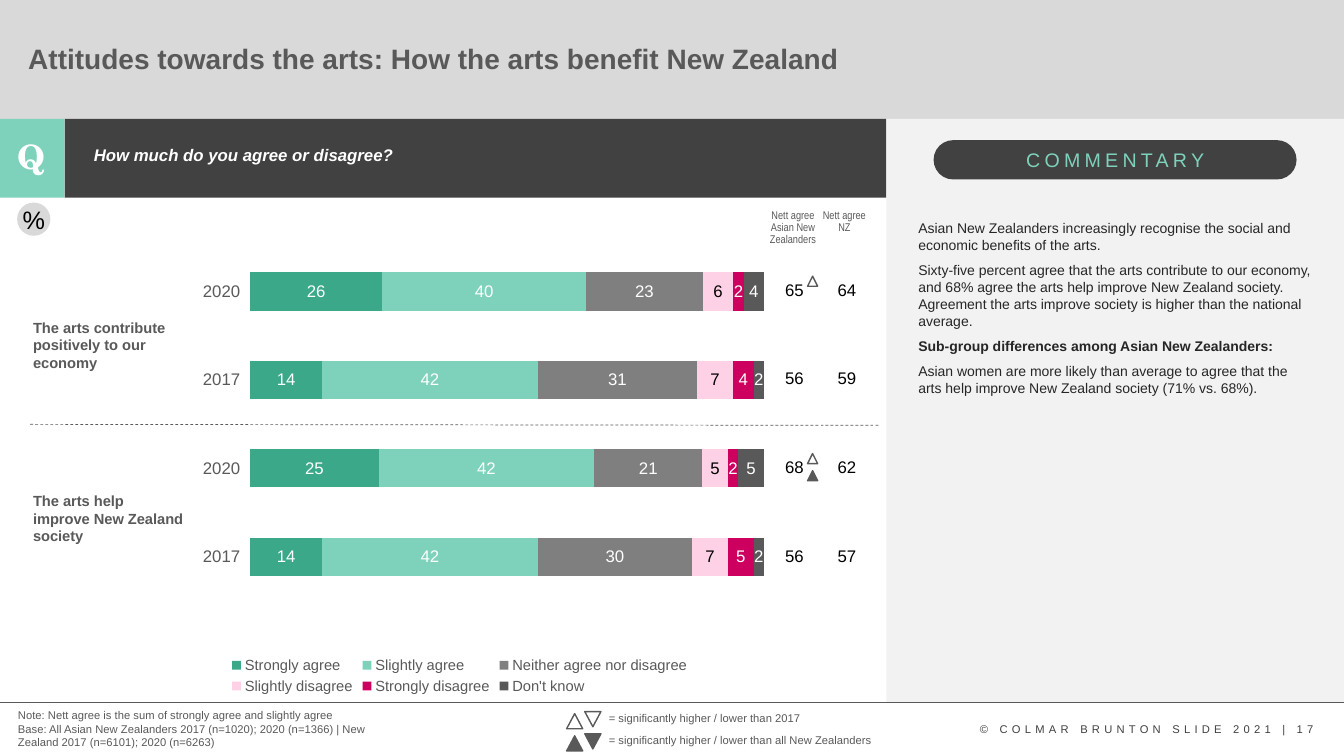
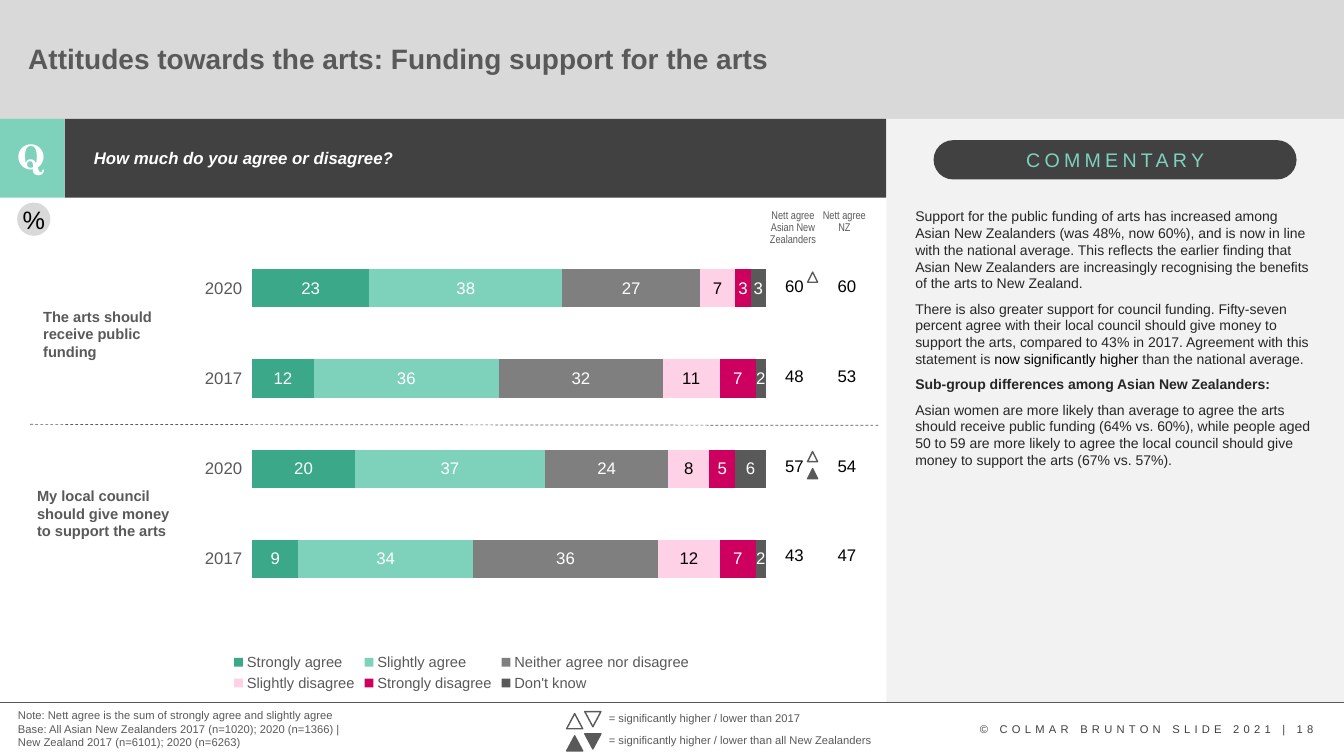
import pptx
import pptx.chart.data
import pptx.dml.color
import pptx.enum.chart
import pptx.enum.dml
import pptx.enum.shapes
import pptx.enum.text
import pptx.oxml
import pptx.oxml.ns
import pptx.util

Inches, Pt = pptx.util.Inches, pptx.util.Pt
qn = pptx.oxml.ns.qn
SHAPE = pptx.enum.shapes.MSO_SHAPE
ANCHOR = pptx.enum.text.MSO_ANCHOR
LEFT, CENTER = pptx.enum.text.PP_ALIGN.LEFT, pptx.enum.text.PP_ALIGN.CENTER

GREY, DARK, MINT = "595959", "414141", "7ED2BB"
PALE, PANEL, WHITE, BLACK, INK = "D9D9D9", "F2F2F2", "FFFFFF", "000000", "262626"
FONT = "Arial"
SERIES = [  # name, fill, label colour
    ("Strongly agree", "3AA889", WHITE),
    ("Slightly agree", MINT, WHITE),
    ("Neither agree nor disagree", "7F7F7F", WHITE),
    ("Slightly disagree", "FFD1E6", BLACK),
    ("Strongly disagree", "CD005F", WHITE),
    ("Don't know", GREY, WHITE),
]
YEARS = ["2017", "2020", "2017", "2020"]
NOTES = ["Note: Nett agree is the sum of strongly agree and slightly agree",
         "Base: All Asian New Zealanders 2017 (n=1020); 2020 (n=1366) | "
         "New Zealand 2017 (n=6101); 2020 (n=6263)"]
SUBGROUPS = [("Sub-group differences among Asian New Zealanders:", {"bold": True})]


def rgb(value):
    return pptx.dml.color.RGBColor.from_string(value)


def inches(*lengths):
    return [Inches(v) for v in lengths]


def style(font, size=10, color=GREY, name=FONT, bold=False, italic=False):
    font.size, font.name = Pt(size), name
    font.bold, font.italic = bold, italic
    font.color.rgb = rgb(color)


def write(tf, paragraphs, align=LEFT, line=None, before=0, spacing=0, plain=False, **fmt):
    """Fill a text frame; a paragraph is a string or a list of (text, overrides)."""
    if isinstance(paragraphs, str):
        paragraphs = [paragraphs]
    for i, runs in enumerate(paragraphs):
        p = tf.add_paragraph() if i else tf.paragraphs[0]
        if plain:
            pPr = p._p.get_or_add_pPr()
            pPr.set("marL", "0")
            pPr.set("indent", "0")
            pPr.append(pptx.oxml.parse_xml(
                f"<a:buNone {pptx.oxml.ns.nsdecls('a')}/>"))
        p.alignment = align
        p.space_before = Pt(before if i else 0)
        if line:
            p.line_spacing = line
        for text, extra in ([(runs, {})] if isinstance(runs, str) else runs):
            r = p.add_run()
            r.text = text
            style(r.font, **{**fmt, **extra})
            if spacing:
                r._r.get_or_add_rPr().set("spc", str(spacing * 100))


def add_text(shapes, x, y, w, h, paragraphs, wrap=True, **fmt):
    tf = shapes.add_textbox(*inches(x, y, w, h)).text_frame
    tf.word_wrap = wrap
    write(tf, paragraphs, **fmt)


def add_shape(shapes, kind, x, y, w, h, fill, line=None):
    sp = shapes.add_shape(kind, *inches(x, y, w, h))
    sp.shadow.inherit = False
    sp.fill.solid()
    sp.fill.fore_color.rgb = rgb(fill)
    if line:
        sp.line.color.rgb = rgb(line)
        sp.line.width = Pt(1)
    else:
        sp.line.fill.background()
    return sp


def add_line(shapes, x1, y1, x2, y2, dash=None):
    c = shapes.add_connector(pptx.enum.shapes.MSO_CONNECTOR.STRAIGHT,
                             *inches(x1, y1, x2, y2))
    c.line.color.rgb = rgb(GREY)
    c.line.width = Pt(0.5)
    if dash:
        c.line.dash_style = dash
    c.element.spPr.append(pptx.oxml.parse_xml(
        f"<a:effectLst {pptx.oxml.ns.nsdecls('a')}/>"))


def add_marker(shapes, x, y, w, h, fill, down=False):
    sp = add_shape(shapes, SHAPE.ISOSCELES_TRIANGLE, x, y, w, h, fill, GREY)
    sp.rotation = 180 if down else 0


def fill_placeholder(ph, x, y, w, h, text, anchor, **fmt):
    """Place a placeholder in front of the bands and fill it."""
    ph.element.getparent().append(ph.element)
    ph.left, ph.top, ph.width, ph.height = inches(x, y, w, h)
    tf = ph.text_frame
    tf.auto_size = pptx.enum.text.MSO_AUTO_SIZE.NONE
    tf.vertical_anchor = anchor
    write(tf, text, line=0.9, plain=True, **fmt)


def header(slide, x, y, w, h, title):
    add_shape(slide.shapes, SHAPE.RECTANGLE, x, y, w, h, PALE)
    fill_placeholder(slide.shapes.title, x + 0.18, y + 0.23, 11.19, 0.78, title,
                     ANCHOR.MIDDLE, size=20, bold=True)


def question_bar(slide, x, y, w, h, question, text_top):
    tag = 0.64
    add_shape(slide.shapes, SHAPE.RECTANGLE, x + tag, y, w - tag, h, DARK)
    add_shape(slide.shapes, SHAPE.RECTANGLE, x, y, tag, h, MINT)
    add_text(slide.shapes, x + 0.08, y + 0.12, 0.47, 0.5, "Q", align=CENTER,
             size=24, color=WHITE, name="TeX Gyre Schola", bold=True)
    fill_placeholder(slide.placeholders[1], x + 0.83, y + text_top, 7.6, 0.4, question,
                     ANCHOR.TOP, size=12, color=WHITE, bold=True, italic=True)


def commentary(slide, x, y, w, h, paragraphs, text_box):
    add_shape(slide.shapes, SHAPE.RECTANGLE, x, y, w, h, PANEL)
    pill = add_shape(slide.shapes, SHAPE.ROUNDED_RECTANGLE,
                     x + 0.47, y + 0.21, 3.6, 0.39, DARK)
    pill.adjustments[0] = 0.5
    add_text(slide.shapes, x + 1.29, y + 0.24, 2.02, 0.34, "COMMENTARY", wrap=False,
             size=14, color=MINT, spacing=3)
    dx, dy, text_w, text_h = text_box
    add_text(slide.shapes, x + dx, y + dy, text_w, text_h, paragraphs,
             before=6, color=INK)


def add_chart(shapes, x, y, w, h, values, gap, plot_box):
    data = pptx.chart.data.CategoryChartData()
    data.categories = YEARS
    for (name, _, _), vals in zip(SERIES, values):
        data.add_series(name, vals)
    chart = shapes.add_chart(pptx.enum.chart.XL_CHART_TYPE.BAR_STACKED_100,
                             *inches(x, y, w, h), data).chart
    style(chart.font, color=BLACK)
    chart.has_title = False
    chart.has_legend = True
    chart.legend.position = pptx.enum.chart.XL_LEGEND_POSITION.BOTTOM
    chart.legend.include_in_layout = False
    style(chart.legend.font, size=10.5)
    axis = chart.category_axis
    axis.major_tick_mark = pptx.enum.chart.XL_TICK_MARK.OUTSIDE
    axis.format.line.fill.background()
    style(axis.tick_labels.font, size=12)
    chart.value_axis.has_major_gridlines = False
    chart.value_axis.visible = False
    plot = chart.plots[0]
    plot.gap_width, plot.overlap = gap, 100
    plot.vary_by_categories = False
    for series, (_, fill, label) in zip(plot.series, SERIES):
        series.format.fill.solid()
        series.format.fill.fore_color.rgb = rgb(fill)
        series.data_labels.show_value = True
        style(series.data_labels.font, size=12, color=label)
    area = chart.element.find(".//" + qn("c:plotArea"))
    for old in area.findall(qn("c:layout")):
        area.remove(old)
    sizes = "".join(f'<c:{k} val="{v}"/>' for k, v in zip("xywh", plot_box))
    area.insert(0, pptx.oxml.parse_xml(
        f'<c:layout {pptx.oxml.ns.nsdecls("c")}><c:manualLayout>'
        '<c:layoutTarget val="inner"/><c:xMode val="edge"/><c:yMode val="edge"/>'
        f'{sizes}</c:manualLayout></c:layout>'))


def nett_table(shapes, x, y, col_w, row_h, rows):
    """Nett scores with their significance markers."""
    table = shapes.add_table(len(rows), 2, *inches(x, y, 2 * col_w, row_h * len(rows))).table
    table.first_row = table.horz_banding = False
    for col in table.columns:
        col.width = Inches(col_w)
    for i, scores in enumerate(rows):
        table.rows[i].height = Inches(row_h)
        for j, score in enumerate(scores):
            cell = table.cell(i, j)
            cell.fill.background()
            cell.vertical_anchor = ANCHOR.MIDDLE
            write(cell.text_frame, str(score), align=CENTER, size=12, color=BLACK)
    for row, drop, fill in [(0, 0, WHITE), (2, 0, WHITE), (2, 0.17, GREY)]:
        add_marker(shapes, x + 0.39, y + row * row_h + 0.3 + drop, 0.1, 0.1, fill)


def results(slide, x, y, w, h, chart, nett, statements):
    shapes = slide.shapes
    dx, dy, chart_w, chart_h = chart["box"]
    add_chart(shapes, x + dx, y + dy, chart_w, chart_h,
              chart["values"], chart["gap"], chart["plot"])
    for text, left, top, text_w in statements:
        add_text(shapes, x + left, y + top, text_w, 0.63, text, size=10.5, bold=True)
    add_line(shapes, x + 0.3, y + 2.25, x + w - 0.07, y + 2.26,
             pptx.enum.dml.MSO_LINE.DASH)
    nett_table(shapes, x + 7.62, y + nett["top"], 0.52, nett["row_h"], nett["rows"])
    badge = add_shape(shapes, SHAPE.OVAL, x + 0.17, y + 0.05, 0.33, 0.33, PALE)
    tf = badge.text_frame
    tf.margin_left = tf.margin_right = tf.margin_top = tf.margin_bottom = 0
    tf.vertical_anchor = ANCHOR.MIDDLE
    tf.word_wrap = False
    write(tf, "%", align=CENTER, size=18, color=BLACK)
    for left, label in [(7.52, "Nett agree Asian New Zealanders"),
                        (8.03, ["Nett agree", "NZ"])]:
        add_text(shapes, x + left, y + 0.07, 0.69, 0.46, label, align=CENTER,
                 line=0.9, size=8, name="Arial Narrow")


def footer(slide, x, y, w, h, number, note_w):
    add_line(slide.shapes, x, y, x + w, y)
    add_text(slide.shapes, x + 0.08, y + 0.01, note_w, 0.5, NOTES, size=8)
    for i, (fill, base, text_w) in enumerate([(WHITE, "2017", 2.13),
                                              (GREY, "all New Zealanders", 2.84)]):
        top = y + 0.04 + i * 0.22
        group = slide.shapes.add_group_shape().shapes
        add_text(group, x + 5.94, top, text_w, 0.24,
                 f"= significantly higher / lower than {base}", wrap=False, size=8)
        add_marker(group, x + 5.62, top + 0.07, 0.16, 0.15, fill)
        add_marker(group, x + 5.8, top + 0.05, 0.16, 0.15, fill, down=True)
    add_text(slide.shapes, x + 9.62, y + 0.15, 3.61, 0.24,
             f"© COLMAR BRUNTON SLIDE 2021 | {number}", size=8, color="404040", spacing=3)


def survey_slide(prs, number, title, question_top, note_w, comments, comment_box, **parts):
    slide = prs.slides.add_slide(prs.slide_layouts[1])
    header(slide, 0, -0.02, 13.33, 1.2, title)
    commentary(slide, 8.79, 1.18, 4.55, 5.79, comments, comment_box)
    question_bar(slide, 0, 1.18, 8.79, 0.78, "How much do you agree or disagree?", question_top)
    results(slide, 0, 1.96, 8.79, 5.01, **parts)
    footer(slide, 0, 6.97, 13.33, 0.53, number, note_w)


def main():
    prs = pptx.Presentation()
    prs.slide_width, prs.slide_height = inches(13.33, 7.5)
    survey_slide(
        prs, 17, "Attitudes towards the arts: How the arts benefit New Zealand", 0.23, 3.75,
        ["Asian New Zealanders increasingly recognise the social and economic benefits "
         "of the arts.",
         "Sixty-five percent agree that the arts contribute to our economy, and 68% agree "
         "the arts help improve New Zealand society. Agreement the arts improve society "
         "is higher than the national average.",
         SUBGROUPS,
         "Asian women are more likely than average to agree that the arts help improve "
         "New Zealand society (71% vs. 68%)."],
        (0.22, 0.95, 4.09, 1.87),
        chart={"box": (1.43, -0.43, 6.26, 5.4), "gap": 131,
               "plot": (0.168, 0.171, 0.814, 0.65),
               "values": [(14, 25, 14, 26), (42, 42, 42, 40), (30, 21, 31, 23),
                          (7, 5, 7, 6), (5, 2, 4, 2), (2, 5, 2, 4)]},
        nett={"top": 0.48, "row_h": 0.88,
              "rows": [(65, 64), (56, 59), (68, 62), (56, 57)]},
        statements=[("The arts contribute positively to our economy", 0.23, 1.15, 1.7),
                    ("The arts help improve New Zealand society", 0.23, 2.87, 1.7)])
    survey_slide(
        prs, 18, "Attitudes towards the arts: Funding support for the arts", 0.26, 3.6,
        ["Support for the public funding of arts has increased among Asian New Zealanders "
         "(was 48%, now 60%), and is now in line with the national average. This reflects "
         "the earlier finding that Asian New Zealanders are increasingly recognising the "
         "benefits of the arts to New Zealand.",
         [("There is also greater support for council funding. Fifty-seven percent agree "
           "with their local council should give money to support the arts, compared to "
           "43% in 2017. Agreement with this statement is ", {}),
          ("now significantly higher ", {"color": BLACK}),
          ("than the national average.", {})],
         SUBGROUPS,
         "Asian women are more likely than average to agree the arts should receive public "
         "funding (64% vs. 60%), while people aged 50 to 59 are more likely to agree the "
         "local council should give money to support the arts (67% vs. 57%)."],
        (0.19, 0.83, 4.14, 2.71),
        chart={"box": (1.45, 0.1, 6.26, 4.84), "gap": 136,
               "plot": (0.168, 0.073, 0.814, 0.74),
               "values": [(9, 20, 12, 23), (34, 37, 36, 38), (36, 24, 32, 27),
                          (12, 8, 11, 7), (7, 5, 7, 3), (2, 6, 2, 3)]},
        nett={"top": 0.44, "row_h": 0.89,
              "rows": [(60, 60), (48, 53), (57, 54), (43, 47)]},
        statements=[("The arts should receive public funding", 0.33, 1.04, 1.68),
                    ("My local council should give money to support the arts",
                     0.27, 2.82, 1.64)])
    prs.save("out.pptx")


if __name__ == "__main__":
    main()
